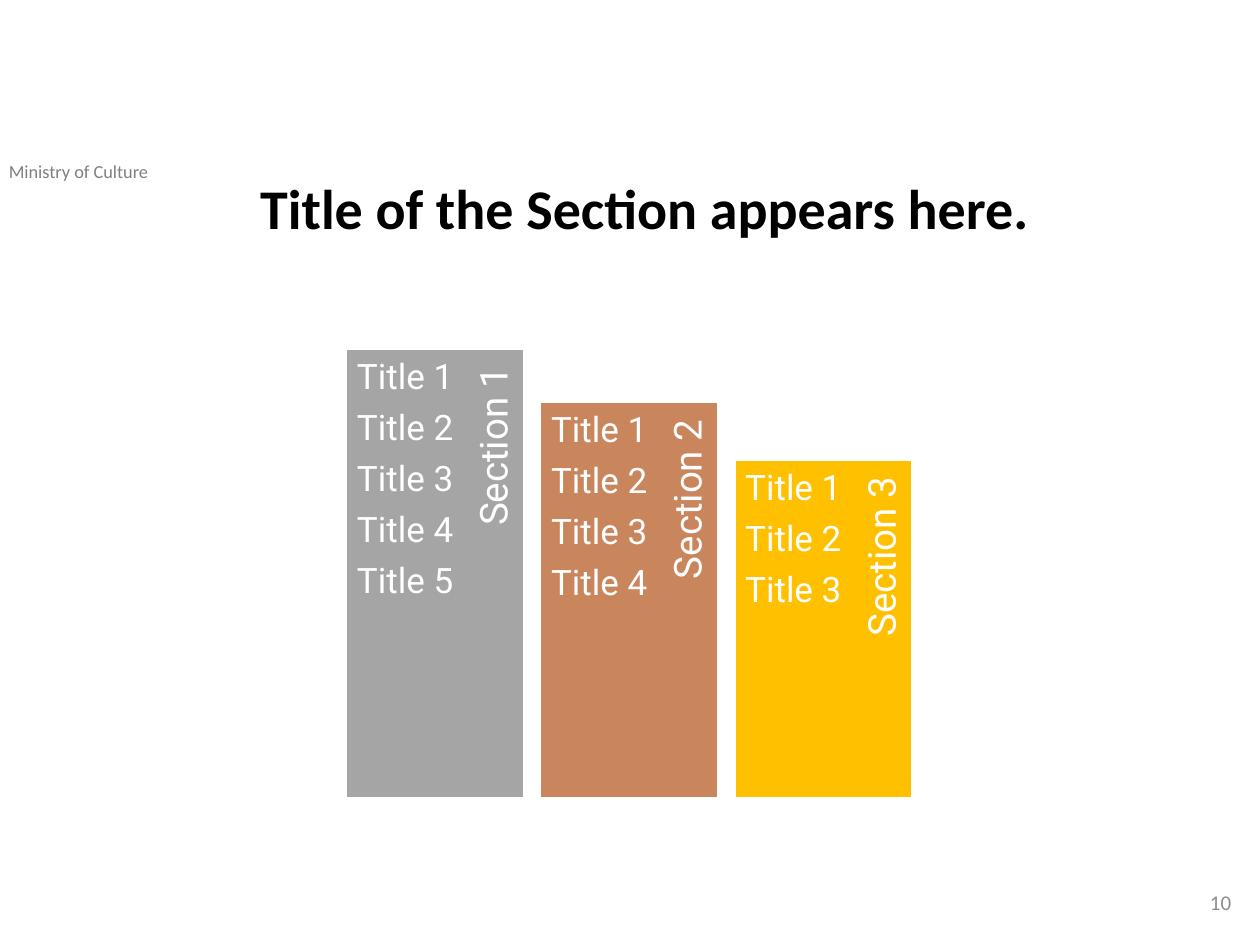
"""Build a section slide with three stepped columns of titles."""
from dataclasses import dataclass

from pptx import Presentation as Deck
from pptx.dml.color import RGBColor as Color
from pptx.enum.shapes import MSO_SHAPE as Shape
from pptx.enum.text import MSO_ANCHOR as Anchor, PP_ALIGN as Align
from pptx.util import Pt


@dataclass(frozen=True)
class Theme:
    head: str = "Calibri"
    body: str = "Roboto"
    black: str = "000000"
    white: str = "FFFFFF"
    gray: str = "808080"
    pale: str = "8C8C8C"
    fills: tuple = ("A5A5A5", "C9855C", "FFC000")
    title: float = 32
    label: float = 22
    item: float = 20
    page: float = 12
    owner: float = 10.5


LOOK = Theme()
LEFT, STEP, WIDE, BASE = 198, 110.9, 101.5, 456
TOPS = (199.4, 229.8, 262.7)
COUNTS = (5, 4, 3)


def add_text(slide, rect, lines, font, size, color, bold=False, align=Align.LEFT,
             anchor=Anchor.TOP, pads=(7.2, 3.6, 7.2, 3.6), lead=1.0, gap=0):
    box = slide.shapes.add_textbox(*map(Pt, rect))
    frame = box.text_frame
    frame.word_wrap = True
    frame.vertical_anchor = anchor
    frame.margin_left, frame.margin_top, frame.margin_right, frame.margin_bottom = map(Pt, pads)
    for spot, line in enumerate(lines):
        para = frame.add_paragraph() if spot else frame.paragraphs[0]
        para.alignment = align
        para.line_spacing = lead
        para.space_after = Pt(gap)
        run = para.add_run()
        run.text = line
        run.font.name = font
        run.font.size = Pt(size)
        run.font.bold = bold
        run.font.color.rgb = Color.from_string(color)
    return box


def add_bar(slide, rect, fill):
    bar = slide.shapes.add_shape(Shape.RECTANGLE, *map(Pt, rect))
    bar.shadow.inherit = False
    bar.fill.solid()
    bar.fill.fore_color.rgb = Color.from_string(fill)
    bar.line.color.rgb = Color.from_string(LOOK.white)
    bar.line.width = Pt(1)


def add_label(slide, left, top, high, text):
    span, thick = high * 0.9, 26.6
    mid_x, mid_y = left + 86, top + span / 2
    rect = (mid_x - span / 2, mid_y - thick / 2, span, thick)
    box = add_text(slide, rect, [text], LOOK.body, LOOK.label, LOOK.white,
                   align=Align.RIGHT, anchor=Anchor.MIDDLE, pads=(6.5, 0, 10, 2), lead=0.9)
    box.rotation = 270


def add_column(slide, spot, top, count, fill):
    left, high = LEFT + spot * STEP, BASE - top
    add_bar(slide, (left, top, WIDE, high), fill)
    add_label(slide, left, top, high, f"Section {spot + 1}")
    items = [f"Title {n}" for n in range(1, count + 1)]
    add_text(slide, (left, top, 72, high), items, LOOK.body, LOOK.item, LOOK.white,
             pads=(6, 6, 6, 6), lead=0.9, gap=7.5)


def main():
    deck = Deck()
    deck.slide_width, deck.slide_height = Pt(720), Pt(540)
    slide = deck.slides.add_slide(deck.slide_layouts[6])
    add_text(slide, (-2, 88, 157, 20), ["Ministry of Culture"],
             LOOK.head, LOOK.owner, LOOK.gray)
    add_text(slide, (548.6, 501, 162, 28.8), ["10"], LOOK.head, LOOK.page, LOOK.pale,
             align=Align.RIGHT, anchor=Anchor.MIDDLE)
    for spot, (top, count, fill) in enumerate(zip(TOPS, COUNTS, LOOK.fills)):
        add_column(slide, spot, top, count, fill)
    add_text(slide, (139, 100, 459, 57), ["Title of the Section appears here."],
             LOOK.head, LOOK.title, LOOK.black, bold=True, align=Align.CENTER, lead=0.9)
    deck.save("out.pptx")


if __name__ == "__main__":
    main()
